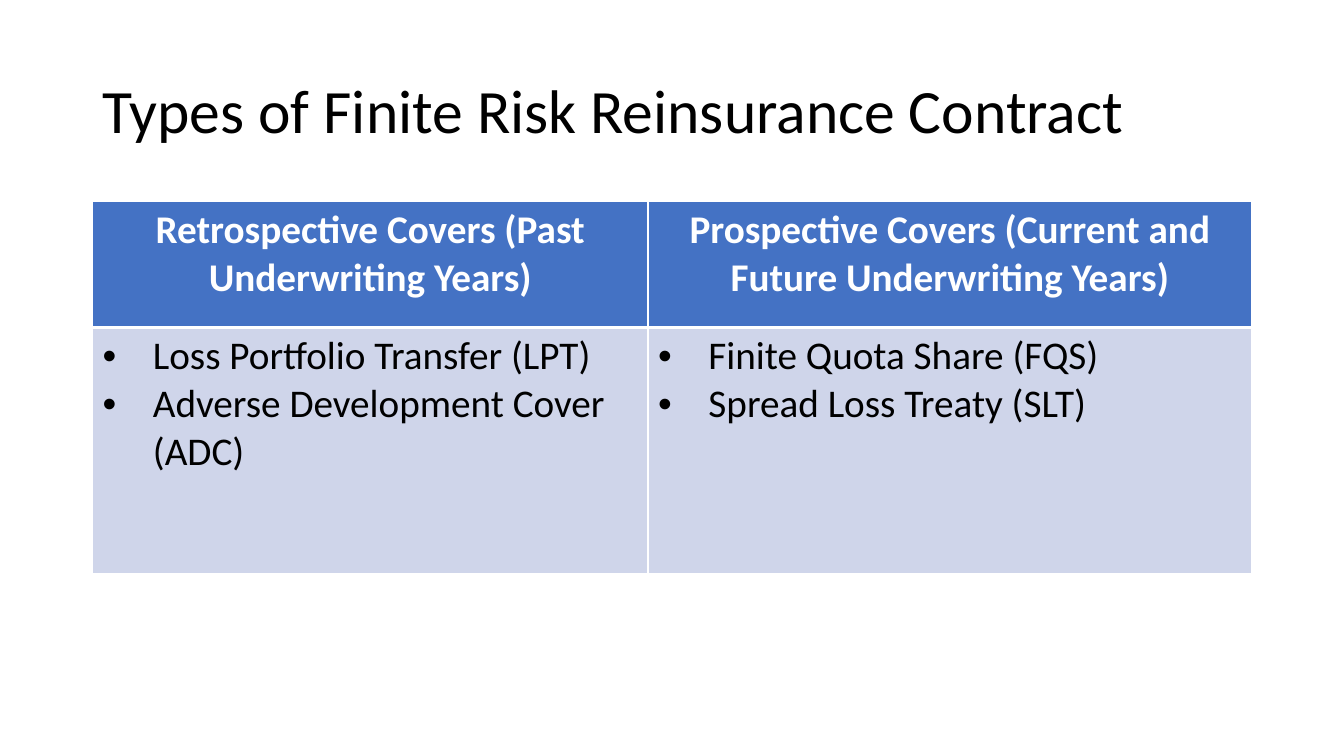
from lxml.etree import SubElement
from pptx import Presentation
from pptx.dml.color import RGBColor
from pptx.enum.text import MSO_ANCHOR as ANCHOR, PP_ALIGN as ALIGN
from pptx.oxml.ns import qn
from pptx.util import Cm, Pt

FONT = "Calibri"
COLORS = {"text": "000000", "white": "FFFFFF", "header": "4472C4", "body": "CFD5EA"}
COVERS = {
    "Retrospective Covers (Past Underwriting Years)": [
        "Loss Portfolio Transfer (LPT)",
        "Adverse Development Cover (ADC)",
    ],
    "Prospective Covers (Current and Future Underwriting Years)": [
        "Finite Quota Share (FQS)",
        "Spread Loss Treaty (SLT)",
    ],
}


def rgb(name):
    return RGBColor.from_string(COLORS[name])


def write(p, text, size=28, color="text", bold=False, align=ALIGN.LEFT, spacing=None, bullet=False):
    p.alignment = align
    if spacing:
        p.line_spacing = spacing
    if bullet:
        indent = Cm(1.27)
        pPr = p._p.get_or_add_pPr()
        pPr.set("marL", str(indent))
        pPr.set("indent", str(-indent))
        SubElement(pPr, qn("a:buFont"), typeface="Arial")
        SubElement(pPr, qn("a:buChar"), char="•")
    r = p.add_run()
    r.text = text
    r.font.name, r.font.size, r.font.bold = FONT, Pt(size), bold
    r.font.color.rgb = rgb(color)


def format_cell(cell, fill, bottom=1):
    tcPr = cell._tc.get_or_add_tcPr()
    for side, width in {"L": 1, "R": 1, "T": 1, "B": bottom}.items():
        ln = SubElement(tcPr, qn(f"a:ln{side}"), w=str(Pt(width)))
        line_fill = SubElement(ln, qn("a:solidFill"))
        SubElement(line_fill, qn("a:srgbClr"), val=COLORS["white"])
    cell.fill.solid()
    cell.fill.fore_color.rgb = rgb(fill)


def add_title(s, text, left, top, width, height):
    title = s.shapes.title
    title.left, title.top, title.width, title.height = left, top, width, height
    tf = title.text_frame
    tf.word_wrap = True
    tf.vertical_anchor = ANCHOR.MIDDLE
    write(tf.paragraphs[0], text, size=44, spacing=0.9)


def add_covers_table(s, left, top, width, height):
    table = s.shapes.add_table(2, len(COVERS), left, top, width, height).table
    table.columns[0].width = Cm(14)
    table.columns[1].width = width - Cm(14)
    table.rows[0].height = Cm(3.17)
    table.rows[1].height = height - Cm(3.17)
    for col, (heading, contracts) in enumerate(COVERS.items()):
        header, body = table.cell(0, col), table.cell(1, col)
        format_cell(header, "header", bottom=3)
        format_cell(body, "body")
        write(header.text_frame.paragraphs[0], heading, color="white", bold=True, align=ALIGN.CENTER)
        tf = body.text_frame
        for i, contract in enumerate(contracts):
            p = tf.add_paragraph() if i else tf.paragraphs[0]
            write(p, contract, bullet=True)


def main():
    prs = Presentation()
    prs.slide_width, prs.slide_height = Cm(33.87), Cm(19.05)
    s = prs.slides.add_slide(prs.slide_layouts[5])
    left, width = Cm(2.33), Cm(29.21)
    add_title(s, "Types of Finite Risk Reinsurance Contract", left, Cm(1.01), width, Cm(3.68))
    add_covers_table(s, left, Cm(5.08), width, Cm(9.37))
    prs.save("out.pptx")


if __name__ == "__main__":
    main()
